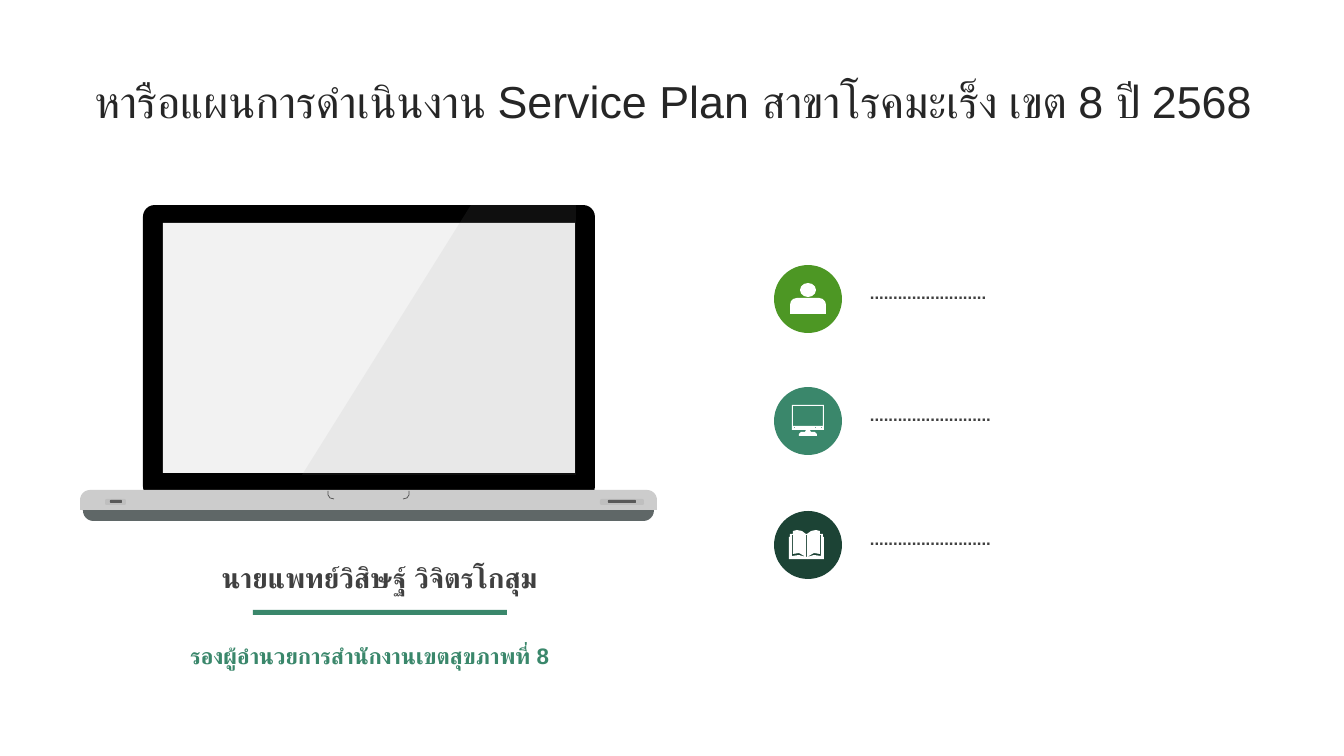
import lxml.etree
import pptx
import pptx.dml.color
import pptx.enum.shapes
import pptx.enum.text
import pptx.oxml.ns
import pptx.util

PX = 914400 / 100.8
SHAPE = pptx.enum.shapes.MSO_SHAPE
ALIGN = pptx.enum.text.PP_ALIGN
WHITE = "FFFFFF"
GREEN = "3A876B"
DARK = "404040"


def px(*lengths):
    return [pptx.util.Emu(round(length * PX)) for length in lengths]


def color(hex_code):
    return pptx.dml.color.RGBColor.from_string(hex_code)


def apply_format(target, values):
    for name, value in values.items():
        setattr(target, name, value)


def paint(shape, fill):
    shape.shadow.inherit = False
    shape.fill.solid()
    shape.fill.fore_color.rgb = color(fill)
    shape.line.fill.background()


def add_preset(slide, kind, box, fill, adjustments=()):
    shape = slide.shapes.add_shape(kind, *px(*box))
    for index, value in enumerate(adjustments):
        shape.adjustments[index] = value
    paint(shape, fill)


def add_outline(slide, contours, close=True):
    builder = slide.shapes.build_freeform(*contours[0][0], scale=PX)
    for index, contour in enumerate(contours):
        if index:
            builder.move_to(*contour[0])
        builder.add_line_segments(contour[1:], close=close)
    return builder.convert_to_shape()


def add_label(slide, box, text, size, hex_code, align=ALIGN.CENTER, bold=True, spacing=1.0):
    label = slide.shapes.add_textbox(*px(*box))
    apply_format(label.text_frame, {
        "word_wrap": True,
        "vertical_anchor": pptx.enum.text.MSO_ANCHOR.MIDDLE,
    })
    paragraph = label.text_frame.paragraphs[0]
    apply_format(paragraph, {"alignment": align, "line_spacing": spacing})
    run = paragraph.add_run()
    run.text = text
    apply_format(run.font, {"name": "Arial", "size": pptx.util.Pt(size), "bold": bold})
    run.font.color.rgb = color(hex_code)


def mirror(points, axis_sum):
    return [(axis_sum - x, y) for x, y in reversed(points)]


def rectangle(left, top, right, bottom):
    return [(left, top), (right, top), (right, bottom), (left, bottom)]


def add_glare(slide):
    glare = add_outline(slide, [[(471, 205), (576, 205), (576, 475), (302, 475)]])
    paint(glare, "999999")
    tint = next(glare.element.iter(pptx.oxml.ns.qn("a:srgbClr")))
    lxml.etree.SubElement(tint, pptx.oxml.ns.qn("a:alpha"), val="10000")


def add_notch(slide):
    left_edge = [(328, 491), (328, 495), (330, 498), (334, 499)]
    for edge in (left_edge, mirror(left_edge, 737)):
        notch = add_outline(slide, [edge], close=False)
        notch.shadow.inherit = False
        notch.fill.background()
        notch.line.color.rgb = color("4D4D4D")
        notch.line.width = pptx.util.Pt(0.5)


def add_laptop(slide):
    add_preset(slide, SHAPE.ROUND_2_SAME_RECTANGLE, (83, 500, 571, 21), "5F6767", (0, 0.5))
    add_preset(slide, SHAPE.ROUNDED_RECTANGLE, (143, 205, 452, 293), "000000", (0.04,))
    add_preset(slide, SHAPE.RECTANGLE, (163, 223, 412, 250), "F2F2F2")
    add_preset(slide, SHAPE.ROUND_2_SAME_RECTANGLE, (80, 490, 577, 20), "CCCCCC", (0.5, 0))
    add_notch(slide)
    for left, width, slot_left, slot_width in ((105, 21, 110, 12), (600, 44, 608, 28)):
        add_preset(slide, SHAPE.ROUNDED_RECTANGLE, (left, 499, width, 6), "BFBFBF", (0.28,))
        add_preset(slide, SHAPE.ROUNDED_RECTANGLE, (slot_left, 500, slot_width, 3), "595959", (0.28,))
    add_glare(slide)


def add_person(slide):
    add_preset(slide, SHAPE.OVAL, (800, 283, 16, 14), WHITE)
    add_preset(slide, SHAPE.ROUND_2_SAME_RECTANGLE, (790, 298, 36, 16), WHITE, (0.42, 0))


def add_monitor(slide):
    half = [(806, 430), (792, 430), (792, 405)]
    stand = [(799, 436), (799, 434), (801, 432), (805, 432)]
    left_side = stand + half
    outline = left_side + mirror(left_side, 1616)
    screen = rectangle(793, 406, 823, 426)
    buttons = [rectangle(x, 427, x + 1, 428) for x in (794, 815, 821)]
    paint(add_outline(slide, [outline, screen] + buttons), WHITE)


def add_book(slide):
    cover = [(789, 559), (789, 537), (790, 537), (790, 534), (793, 534),
             (793, 531), (797, 530), (802, 531), (806, 534)]
    page_gap = [(792, 535), (793, 535), (793, 554), (799, 553),
                (806, 557), (799, 555), (792, 556)]
    spine = rectangle(806, 535, 807, 557)
    contours = [cover + mirror(cover, 1613), page_gap, mirror(page_gap, 1613), spine]
    paint(add_outline(slide, contours), WHITE)


def add_topic(slide, top, fill, dots, add_icon):
    add_preset(slide, SHAPE.OVAL, (774, top, 68, 68), fill)
    add_icon(slide)
    add_label(slide, (860, top + 13, 452, 30), "." * dots, 12, DARK, ALIGN.LEFT)


def main():
    presentation = pptx.Presentation()
    width, height = px(1344, 756)
    apply_format(presentation, {"slide_width": width, "slide_height": height})
    slide = presentation.slides.add_slide(presentation.slide_layouts[6])
    add_laptop(slide)
    add_label(slide, (35, 64, 1276, 80),
              "หารือแผนการดำเนินงาน Service Plan สาขาโรคมะเร็ง เขต 8 ปี 2568",
              32, "262626", bold=False, spacing=0.9)
    add_label(slide, (157, 555, 445, 44), "นายแพทย์วิสิษฐ์ วิจิตรโกสุม", 20, DARK)
    add_label(slide, (164, 634, 411, 44), "รองผู้อำนวยการสำนักงานเขตสุขภาพที่ 8", 16, GREEN)
    add_preset(slide, SHAPE.RECTANGLE, (253, 610, 254, 5), GREEN)
    add_topic(slide, 265, "4D9724", 25, add_person)
    add_topic(slide, 387, GREEN, 26, add_monitor)
    add_topic(slide, 511, "1C4335", 26, add_book)
    presentation.save("out.pptx")


if __name__ == "__main__":
    main()
